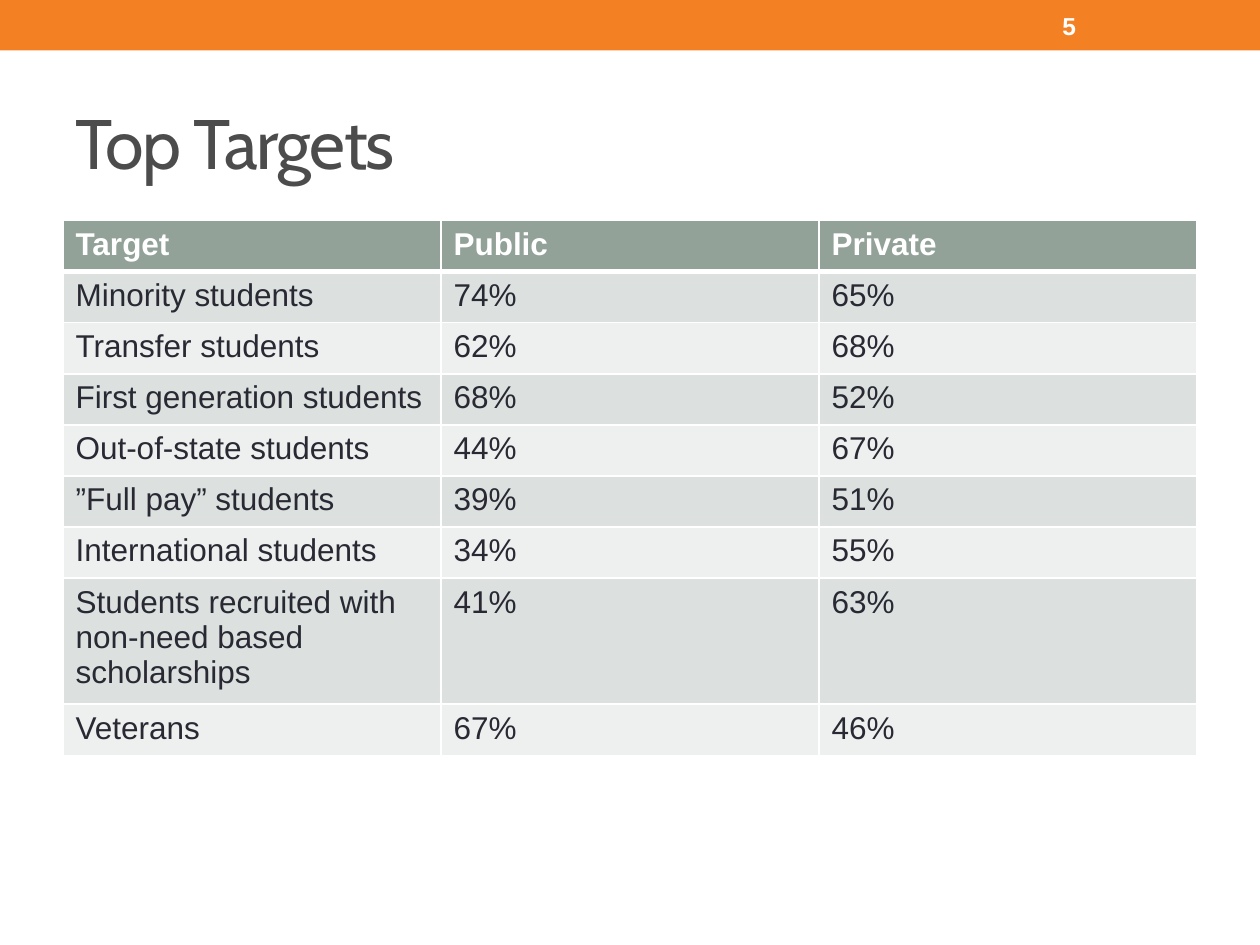
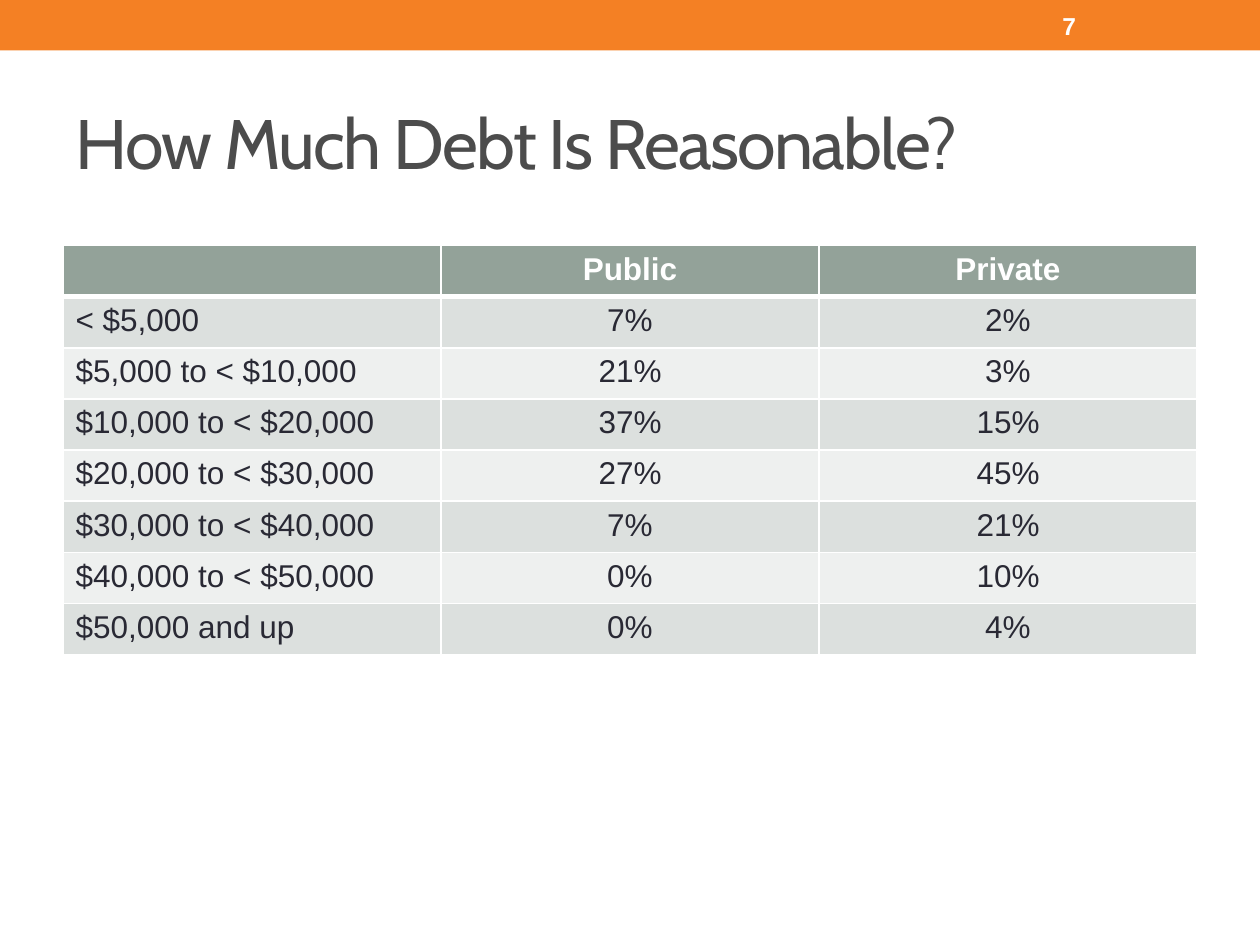
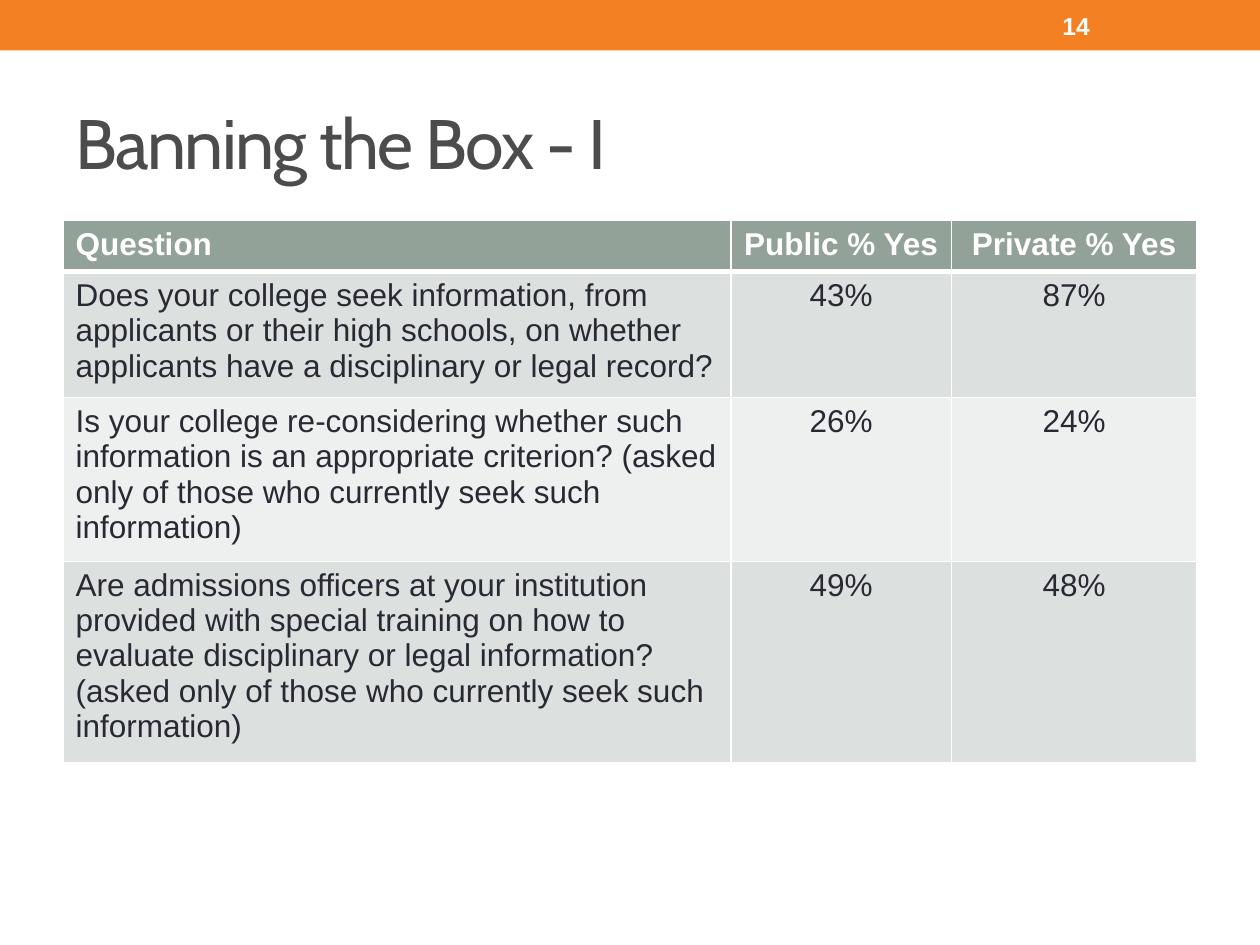
import pptx
import pptx.util
import pptx.dml.color
import pptx.enum.shapes
import pptx.enum.text
import lxml.etree
from dataclasses import dataclass

# Content
PAGES = [
    dict(title="Top Targets", num=5, top=1.75, cols=(3, 3, 3), mid=False, rows=[
        ("Target", "Public", "Private"),
        ("Minority students", "74%", "65%"),
        ("Transfer students", "62%", "68%"),
        ("First generation students", "68%", "52%"),
        ("Out-of-state students", "44%", "67%"),
        ("”Full pay” students", "39%", "51%"),
        ("International students", "34%", "55%"),
        ("Students recruited with non-need based scholarships", "41%", "63%"),
        ("Veterans", "67%", "46%"),
    ]),
    dict(title="How Much Debt Is Reasonable?", num=7, top=1.95, cols=(3, 3, 3), mid=True, rows=[
        ("", "Public", "Private"),
        ("< $5,000", "7%", "2%"),
        ("$5,000 to < $10,000", "21%", "3%"),
        ("$10,000 to < $20,000", "37%", "15%"),
        ("$20,000 to < $30,000", "27%", "45%"),
        ("$30,000 to < $40,000", "7%", "21%"),
        ("$40,000 to < $50,000", "0%", "10%"),
        ("$50,000 and up", "0%", "4%"),
    ]),
    dict(title="Banning the Box - I", num=14, top=1.75, cols=(5.3, 1.75, 1.95), mid=True, rows=[
        ("Question", "Public % Yes", "Private % Yes"),
        ("Does your college seek information, from applicants or their high schools, "
         "on whether applicants have a disciplinary or legal record?", "43%", "87%"),
        ("Is your college re-considering whether such information is an appropriate "
         "criterion? (asked only of those who currently seek such information)", "26%", "24%"),
        ("Are admissions officers at your institution provided with special training "
         "on how to evaluate disciplinary or legal information? (asked only of those "
         "who currently seek such information)", "49%", "48%"),
    ]),
]


# Colours, fonts and sizes
@dataclass(frozen=True)
class Theme:
    band: str = "F48024"
    title: str = "4C4C4C"
    ink: str = "292934"
    white: str = "FFFFFF"
    head: str = "93A299"
    odd: str = "DCE0DE"
    even: str = "EEF0EF"
    face: str = "Arial"
    big_face: str = "Cabin"
    big: int = 40
    body: int = 18
    small: int = 14
    thin: int = 1
    thick: int = 3


T = Theme()
WIDE, HIGH, EDGE = 10, 7.5, 0.5
ROW = pptx.util.Pt(29.2)
INCH = pptx.util.Inches
ALIGN = pptx.enum.text.PP_ALIGN
MIDDLE = pptx.enum.text.MSO_ANCHOR.MIDDLE


def rgb(code):
    return pptx.dml.color.RGBColor.from_string(code)


def write(frame, text, size=T.body, face=T.face, color=T.ink, bold=False,
          align=ALIGN.LEFT, space=None):
    """Set the frame's text in one format; space is letter spacing in points."""
    para = frame.paragraphs[0]
    para.alignment = align
    run = para.add_run()
    run.text = text
    font = run.font
    font.size, font.name, font.bold = pptx.util.Pt(size), face, bold
    font.color.rgb = rgb(color)
    if space is not None:
        font._element.set("spc", str(space * 100))


def edge(cell, side, width):
    """Draw one white cell border."""
    props = cell._tc.get_or_add_tcPr()
    tag = pptx.oxml.ns.qn
    line = lxml.etree.SubElement(props, tag("a:ln" + side), w=str(pptx.util.Pt(width)))
    fill = lxml.etree.SubElement(line, tag("a:solidFill"))
    lxml.etree.SubElement(fill, tag("a:srgbClr"), val=T.white)


def add_band(slide, num):
    """Draw the top band with the slide number on it."""
    band = slide.shapes.add_shape(pptx.enum.shapes.MSO_SHAPE.RECTANGLE,
                                  0, 0, INCH(WIDE), INCH(0.4))
    band.shadow.inherit = False
    band.fill.solid()
    band.fill.fore_color.rgb = rgb(T.band)
    band.line.fill.background()
    left = WIDE * 5 / 6
    box = slide.shapes.add_textbox(*map(INCH, (left, 0.02, WIDE - EDGE - left, 0.37)))
    box.text_frame.word_wrap = True
    box.text_frame.vertical_anchor = MIDDLE
    write(box.text_frame, str(num), size=T.small, color=T.white, bold=True)


def add_grid(slide, page):
    rows, cols = page["rows"], page["cols"]
    grid = slide.shapes.add_table(len(rows), len(cols), INCH(EDGE), INCH(page["top"]),
                                  INCH(sum(cols)), ROW * len(rows)).table
    for col, width in zip(grid.columns, cols):
        col.width = INCH(width)
    for r, row in enumerate(rows):
        grid.rows[r].height = ROW
        head = r == 0
        for c, text in enumerate(row):
            cell = grid.cell(r, c)
            # The rule under the header is the thick one
            for side in "LRTB":
                rule = (side == "B" and head) or (side == "T" and r == 1)
                edge(cell, side, T.thick if rule else T.thin)
            cell.fill.solid()
            cell.fill.fore_color.rgb = rgb(T.head if head else T.odd if r % 2 else T.even)
            if text:
                write(cell.text_frame, text, bold=head, color=T.white if head else T.ink,
                      align=ALIGN.CENTER if page["mid"] and c else ALIGN.LEFT)


def add_page(deck, layout, page):
    slide = deck.slides.add_slide(layout)
    add_band(slide, page["num"])
    # Title
    title = slide.shapes.title
    title.left, title.top, title.width, title.height = map(
        INCH, (EDGE, 0.58, WIDE - 2 * EDGE, 1.08))
    title.text_frame.vertical_anchor = MIDDLE
    write(title.text_frame, page["title"], size=T.big, face=T.big_face,
          color=T.title, space=-1)
    # Table
    add_grid(slide, page)


def main():
    deck = pptx.Presentation()
    deck.slide_width, deck.slide_height = INCH(WIDE), INCH(HIGH)
    layout = deck.slide_layouts.get_by_name("Title Only")
    for page in PAGES:
        add_page(deck, layout, page)
    deck.save("out.pptx")


if __name__ == "__main__":
    main()
